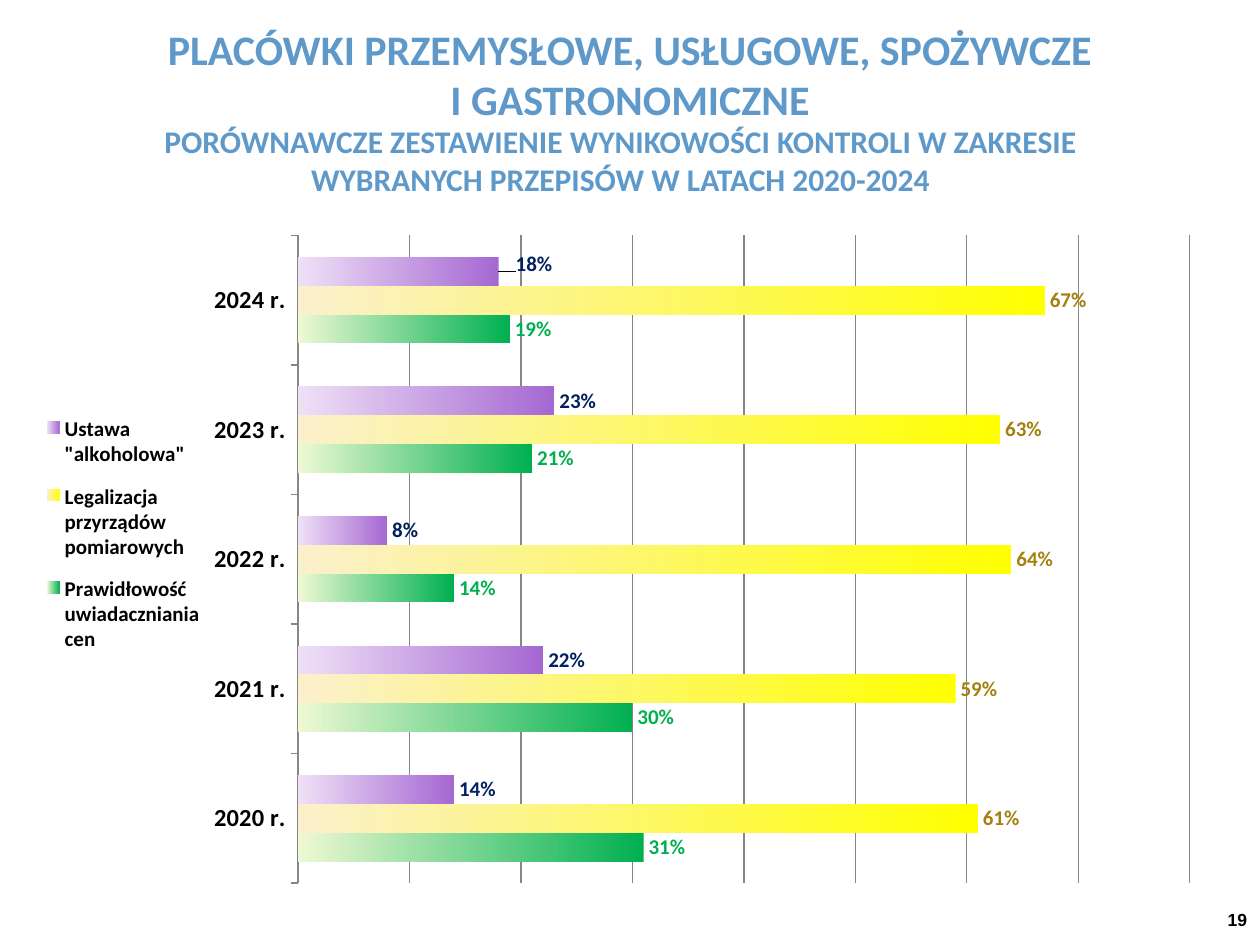
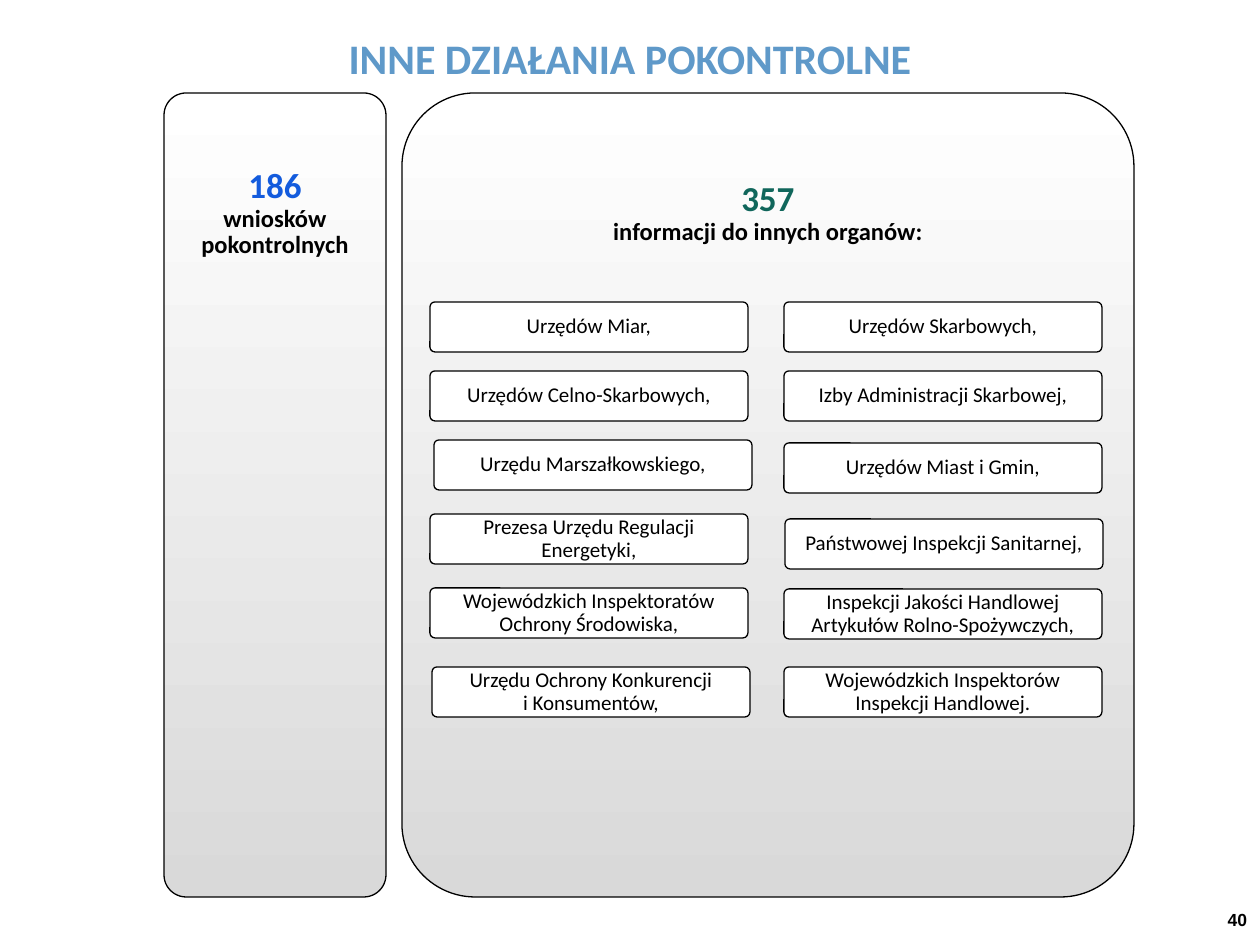
import pptx
import pptx.chart.data
import pptx.dml.color
import pptx.enum.chart
import pptx.enum.shapes
import pptx.enum.text
import pptx.oxml
import pptx.oxml.ns
import pptx.util

EMU_PER_PX = 914400 / 126
HEADING_COLOR, BLACK, WHITE = "5F99C9", "000000", "FFFFFF"
PANEL_BOTTOM, GRID_COLOR = "D9D9D9", "868686"
HEADING = {"name": "Calibri", "size": 24, "bold": True, "color": HEADING_COLOR}
SUBHEADING = {**HEADING, "size": 18}
PAGE_NUMBER = {"name": "Arial", "size": 10, "bold": True, "color": BLACK}
BODY = {"name": "Calibri", "size": 12, "bold": False, "color": BLACK}
CAPTION = {**BODY, "size": 14, "bold": True}
ALIGN = pptx.enum.text.PP_ALIGN
ANCHOR = pptx.enum.text.MSO_ANCHOR

YEARS = ["2020 r.", "2021 r.", "2022 r.", "2023 r.", "2024 r."]
SERIES = [
    ("Prawidłowość uwiadaczniania cen", [0.31, 0.3, 0.14, 0.21, 0.19], "00B050", "EEF9D3", "00B050"),
    ("Legalizacja przyrządów pomiarowych", [0.61, 0.59, 0.64, 0.63, 0.67], "FFFF00", "FBF0CC", "A5800D"),
    ('Ustawa "alkoholowa"', [0.14, 0.22, 0.08, 0.23, 0.18], "A568D2", "EFE0F6", "002060"),
]
AUTHORITIES = [
    (28, 209, ["Urzędów Miar,"]),
    (28, 278, ["Urzędów Celno-Skarbowych,"]),
    (32, 347, ["Urzędu Marszałkowskiego,"]),
    (28, 421, ["Prezesa Urzędu Regulacji Energetyki,"]),
    (28, 495, ["Wojewódzkich Inspektoratów Ochrony Środowiska,"]),
    (30, 574, ["Urzędu Ochrony Konkurencji", "i Konsumentów,"]),
    (382, 209, ["Urzędów Skarbowych,"]),
    (382, 278, ["Izby Administracji Skarbowej,"]),
    (382, 350, ["Urzędów Miast i Gmin,"]),
    (383, 426, ["Państwowej Inspekcji Sanitarnej,"]),
    (382, 496, ["Inspekcji Jakości Handlowej Artykułów Rolno-Spożywczych,"]),
    (382, 574, ["Wojewódzkich Inspektorów Inspekcji Handlowej."]),
]


def px(length):
    """Turn px into EMU."""
    return pptx.util.Emu(round(length * EMU_PER_PX))


def rgb(color):
    """Turn a hex string into a colour."""
    return pptx.dml.color.RGBColor.from_string(color)


def set_values(target, values):
    """Set attributes from a dict."""
    for name, value in values.items():
        setattr(target, name, value)


def format_font(font, style):
    """Apply a text style to a font."""
    set_values(font, {"name": style["name"], "size": pptx.util.Pt(style["size"]), "bold": style["bold"]})
    font.color.rgb = rgb(style["color"])


def fill_gradient(fill, colors, angle):
    """Fill with a gradient of two colours."""
    fill.gradient()
    fill.gradient_angle = angle
    for stop, color in zip(fill.gradient_stops, colors):
        stop.color.rgb = rgb(color)


def write_text(shape, lines, align=ALIGN.CENTER, anchor=ANCHOR.TOP, wrap=True, spacing=1.0, margins=(13, 6, 13, 6)):
    """Write styled lines as one paragraph with line breaks."""
    frame = shape.text_frame
    sides = ("margin_left", "margin_top", "margin_right", "margin_bottom")
    set_values(frame, {side: px(margin) for side, margin in zip(sides, margins)})
    set_values(frame, {"word_wrap": wrap, "vertical_anchor": anchor,
                       "auto_size": pptx.enum.text.MSO_AUTO_SIZE.NONE})
    paragraph = frame.paragraphs[0]
    set_values(paragraph, {"alignment": align, "line_spacing": spacing, "space_before": pptx.util.Pt(0)})
    for index, (text, style) in enumerate(lines):
        if index:
            paragraph.add_line_break()
        run = paragraph.add_run()
        run.text = text
        format_font(run.font, style)


def add_titled_slide(presentation, title_lines, title_box, number):
    """Add a slide with its title and page number."""
    slide = presentation.slides.add_slide(presentation.slide_layouts[5])
    title = slide.shapes.title
    set_values(title, dict(zip(("left", "top", "width", "height"), map(px, title_box))))
    write_text(title, [(line, HEADING) for line in title_lines])
    number_box = slide.shapes.add_textbox(px(1203), px(895), px(57), px(50))
    write_text(number_box, [(number, PAGE_NUMBER)], ALIGN.RIGHT, ANCHOR.MIDDLE, False)
    return slide


def add_rounded_box(slide, box, lines, margins):
    """Add an outlined rounded rectangle with centred text."""
    shape = slide.shapes.add_shape(pptx.enum.shapes.MSO_SHAPE.ROUNDED_RECTANGLE, *map(px, box))
    shape.adjustments[0] = 0.1
    shape.shadow.inherit = False
    shape.fill.solid()
    shape.fill.fore_color.rgb = rgb(WHITE)
    shape.line.color.rgb = rgb(BLACK)
    shape.line.width = pptx.util.Pt(0.75)
    write_text(shape, lines, anchor=ANCHOR.MIDDLE, spacing=0.9, margins=margins)
    return shape


def set_layout(parent, index, values, target=""):
    """Give a chart element a manual layout."""
    for old in parent.findall(pptx.oxml.ns.qn("c:layout")):
        parent.remove(old)
    modes = "" if not target else f'{target}<c:xMode val="edge"/><c:yMode val="edge"/>'
    sizes = "".join(f'<c:{name} val="{value}"/>' for name, value in zip("xywh", values))
    parent.insert(index, pptx.oxml.parse_xml(
        f'<c:layout {pptx.oxml.ns.nsdecls("c")}><c:manualLayout>{modes}{sizes}</c:manualLayout></c:layout>'))


def format_axes(chart):
    """Show the years and vertical grid lines, and hide the value axis."""
    values, years = chart.value_axis, chart.category_axis
    set_values(values, {"minimum_scale": 0, "maximum_scale": 0.8, "major_unit": 0.1,
                        "has_major_gridlines": True, "visible": False})
    years.major_tick_mark = pptx.enum.chart.XL_TICK_MARK.OUTSIDE
    format_font(years.tick_labels.font, CAPTION)
    for line in (values.major_gridlines.format.line, years.format.line):
        line.color.rgb = rgb(GRID_COLOR)
        line.width = pptx.util.Pt(0.75)


def add_results_chart(slide, box):
    """Add the bar chart of results by year."""
    data = pptx.chart.data.CategoryChartData(number_format="0%")
    data.categories = YEARS
    for name, values, *_ in SERIES:
        data.add_series(name, values)
    chart = slide.shapes.add_chart(pptx.enum.chart.XL_CHART_TYPE.BAR_CLUSTERED, *map(px, box), data).chart
    format_font(chart.font, {**BODY, "size": 10})
    set_values(chart, {"has_title": False, "has_legend": True})
    set_values(chart.legend, {"position": pptx.enum.chart.XL_LEGEND_POSITION.LEFT, "include_in_layout": False})
    format_font(chart.legend.font, {**BODY, "bold": True})
    format_axes(chart)
    set_values(chart.plots[0], {"gap_width": 150, "overlap": 0, "vary_by_categories": False})
    outside = pptx.enum.chart.XL_LABEL_POSITION.OUTSIDE_END
    for series, (_, _, strong, pale, label_color) in zip(chart.plots[0].series, SERIES):
        fill_gradient(series.format.fill, (strong, pale), 180)
        label_style = {**BODY, "bold": True, "color": label_color}
        set_values(series.data_labels, {"show_value": True, "number_format": "0%",
                                        "number_format_is_linked": False, "position": outside})
        format_font(series.data_labels.font, label_style)
    moved_label = series.points[len(YEARS) - 1].data_label
    format_font(moved_label.font, label_style)
    moved_label.position = outside
    plot_area, legend, label = (next(chart.element.iter(pptx.oxml.ns.qn(tag)))
                                for tag in ("c:plotArea", "c:legend", "c:dLbl"))
    set_layout(plot_area, 0, (0.23, 0.03, 0.74, 0.91), '<c:layoutTarget val="inner"/>')
    set_layout(legend, 1, (0.01, 0.26, 0.15, 0.38), " ")
    set_layout(label, 1, (0.01, -0.01))


def add_panel(slide, box, count, color, caption):
    """Add a shaded panel headed by a count and its caption."""
    lines = [(count, {**CAPTION, "size": 20, "color": color}), (caption, CAPTION)]
    panel = add_rounded_box(slide, box, lines, (10, 10, 10, 573))
    fill_gradient(panel.fill, (WHITE, PANEL_BOTTOM), 270)


def add_authorities(slide, left, top):
    """Add the boxes of authorities inside a panel."""
    for x, y, lines in AUTHORITIES:
        add_rounded_box(slide, (left + x, top + y, 318, 50), [(line, BODY) for line in lines], (5, 4, 5, 4))


def build_results_slide(presentation):
    """Build the slide comparing inspection results."""
    slide = add_titled_slide(
        presentation, ["PLACÓWKI PRZEMYSŁOWE, USŁUGOWE, SPOŻYWCZE", "I GASTRONOMICZNE"], (35, 17, 1190, 115), "19")
    subtitle = slide.shapes.add_textbox(px(1), px(116), px(1239), px(89))
    write_text(subtitle, [("PORÓWNAWCZE ZESTAWIENIE WYNIKOWOŚCI KONTROLI W ZAKRESIE", SUBHEADING),
                          ("WYBRANYCH PRZEPISÓW W LATACH 2020-2024", SUBHEADING)])
    add_results_chart(slide, (21, 214, 1205, 712))


def build_actions_slide(presentation):
    """Build the slide of actions after inspections."""
    slide = add_titled_slide(presentation, ["INNE DZIAŁANIA POKONTROLNE"], (35, 26, 1190, 63), "40")
    add_panel(slide, (164, 93, 222, 804), "186", "135BDD", "wniosków pokontrolnych")
    add_panel(slide, (402, 93, 732, 804), "357", "10665B", "informacji do innych organów:")
    add_authorities(slide, 402, 93)


def main():
    """Build and save the presentation."""
    presentation = pptx.Presentation()
    set_values(presentation, {"slide_width": px(1260), "slide_height": px(945)})
    build_results_slide(presentation)
    build_actions_slide(presentation)
    presentation.save("out.pptx")


if __name__ == "__main__":
    main()
